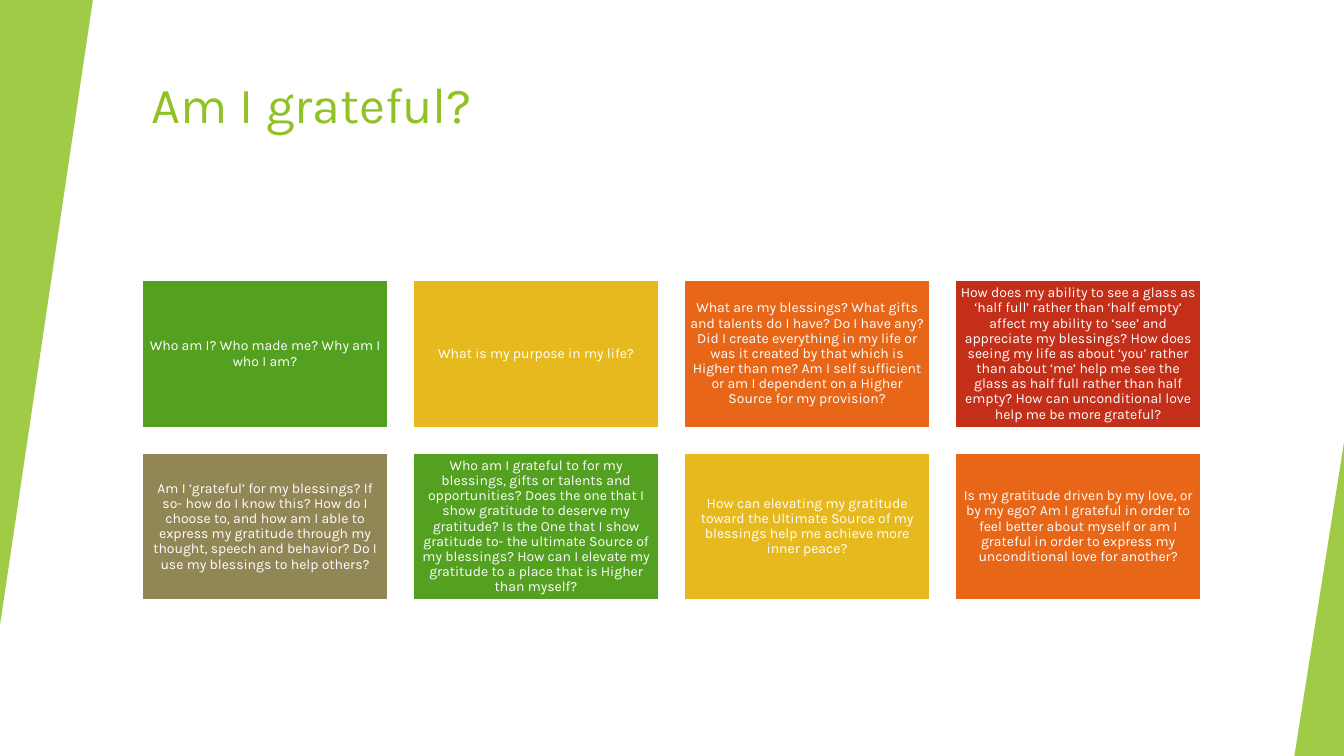
from lxml.etree import SubElement as Sub
from pptx import Presentation
from pptx.dml.color import RGBColor as Rgb
from pptx.enum.shapes import MSO_SHAPE as Form
from pptx.enum.text import MSO_ANCHOR as Anchor, PP_ALIGN as Align
from pptx.oxml.ns import qn
from pptx.util import Cm, Pt

FONT = "Karla"
LIME, GREEN, GOLD = "90C226", "54A021", "E6B91E"
ORANGE, RED, OLIVE, WHITE = "E76618", "C42F1A", "918655", "FFFFFF"


def tint(fmt, code):
    fmt.solid()
    fmt.fore_color.rgb = Rgb.from_string(code)


def write(shape, text, size, color, align=Align.LEFT, anchor=Anchor.TOP,
          inset=(0.25, 0.13), line=1.0, after=0):
    frame = shape.text_frame
    frame.word_wrap = True
    frame.vertical_anchor = anchor
    frame.margin_left = frame.margin_right = Cm(inset[0])
    frame.margin_top = frame.margin_bottom = Cm(inset[1])
    para = frame.paragraphs[0]
    para.alignment = align
    para.line_spacing = line
    para.space_after = Pt(after)
    run = para.add_run()
    run.text = text
    run.font.name = FONT
    run.font.size = Pt(size)
    tint(run.font.fill, color)


deck = Presentation()
deck.slide_width, deck.slide_height = Cm(33.87), Cm(19.05)
slide = deck.slides.add_slide(deck.slide_layouts[5])
tint(slide.background.fill, WHITE)

# Title
title = slide.shapes.title
title.left, title.top = Cm(3.58), Cm(1.7)
title.width, title.height = Cm(28.32), Cm(3.05)
write(title, "Am I grateful?", 36, LIME)

# Slanted wedges on both edges: left, top, width, height, turn
wedges = [(0, 0, 2.34, 15.75, 180), (32.62, 11.15, 1.25, 7.9, 0)]
for left, top, wide, high, turn in wedges:
    wedge = slide.shapes.add_shape(Form.ISOSCELES_TRIANGLE, Cm(left), Cm(top),
                                   Cm(wide), Cm(high))
    wedge.adjustments[0] = 1
    wedge.rotation = turn
    wedge.shadow.inherit = False
    tint(wedge.fill, LIME)
    wedge.line.fill.background()
    hue = wedge.fill.fore_color.rgb and next(wedge.element.spPr.iter(qn("a:srgbClr")))
    Sub(hue, qn("a:alpha"), val="85000")

# Grid of question cards
cards = [
    (GREEN, "Who am I? Who made me? Why am I who I am?"),
    (GOLD, "What is my purpose in my life?"),
    (ORANGE, "What are my blessings? What gifts and talents do I have? "
             "Do I have any? Did I create everything in my life or was it "
             "created by that which is Higher than me? Am I self sufficient "
             "or am I dependent on a Higher Source for my provision?"),
    (RED, "How does my ability to see a glass as ‘half full’ rather than "
          "‘half empty’ affect my ability to ‘see’ and appreciate my "
          "blessings? How does seeing my life as about ‘you’ rather than "
          "about ‘me’ help me see the glass as half full rather than half "
          "empty? How can unconditional love help me be more grateful?"),
    (OLIVE, "Am I ‘grateful’ for my blessings? If so- how do I know this? "
            "How do I choose to, and how am I able to express my gratitude "
            "through my thought, speech and behavior? Do I use my blessings "
            "to help others?"),
    (GREEN, "Who am I grateful to for my blessings, gifts or talents and "
            "opportunities? Does the one that I show gratitude to deserve my "
            "gratitude? Is the One that I show gratitude to- the ultimate "
            "Source of my blessings? How can I elevate my gratitude to a "
            "place that is Higher than myself?"),
    (GOLD, "How can elevating my gratitude toward the Ultimate Source of my "
           "blessings help me achieve more inner peace?"),
    (ORANGE, "Is my gratitude driven by my love, or by my ego? Am I grateful "
             "in order to feel better about myself or am I grateful in order "
             "to express my unconditional love for another?"),
]
for i, (color, text) in enumerate(cards):
    row, col = divmod(i, 4)
    card = slide.shapes.add_shape(Form.RECTANGLE, Cm(3.58 + 6.83 * col),
                                  Cm(7.06 + 4.35 * row), Cm(6.2), Cm(3.72))
    card.shadow.inherit = False
    tint(card.fill, color)
    tint(card.line.fill, WHITE)
    card.line.width = Pt(1.5)
    write(card, text, 10, WHITE, align=Align.CENTER, anchor=Anchor.MIDDLE,
          inset=(0.1, 0.1), line=0.9, after=3.5)

deck.save("out.pptx")
